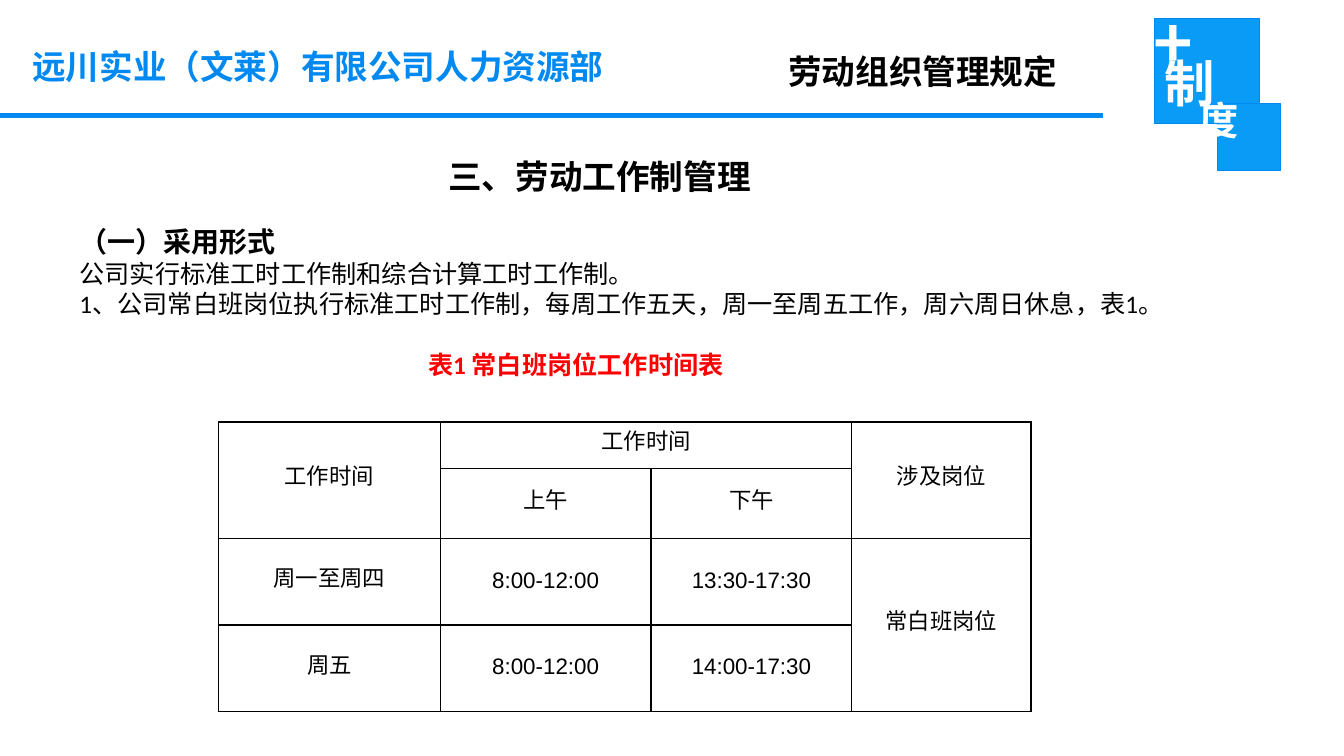
from dataclasses import dataclass

from lxml.etree import SubElement
from pptx import Presentation
from pptx.dml.color import RGBColor
from pptx.enum.shapes import MSO_SHAPE as Preset
from pptx.enum.text import MSO_ANCHOR as Anchor, MSO_AUTO_SIZE as AutoSize, PP_ALIGN as Align
from pptx.oxml.ns import qn
from pptx.util import Pt


@dataclass(frozen=True)
class Theme:
    header_blue: RGBColor = RGBColor(0x00, 0x89, 0xF1)
    square_blue: RGBColor = RGBColor(0x09, 0x9B, 0xF5)
    black: RGBColor = RGBColor(0, 0, 0)
    white: RGBColor = RGBColor(255, 255, 255)
    red: RGBColor = RGBColor(255, 0, 0)
    heading: float = 24
    subheading: float = 20
    body: float = 18
    table: float = 16
    chinese: str = "Noto Sans CJK SC"
    plus_font: str = "Noto Sans CJK JP"
    body_font: str = "Calibri"
    table_font: str = "Arial"


THEME = Theme()


@dataclass(frozen=True)
class Area:
    left: float
    top: float
    width: float
    height: float

    def lengths(self) -> tuple:
        return Pt(self.left), Pt(self.top), Pt(self.width), Pt(self.height)


@dataclass(frozen=True)
class Line:
    text: str
    size: float = THEME.heading
    color: RGBColor = THEME.black
    bold: bool = True
    font: str = THEME.chinese
    east_asian: str = THEME.chinese
    indent: float = 0
    before: float = 0
    spacing: object = 1.0
    align: Align = Align.LEFT


@dataclass(frozen=True)
class Block:
    area: Area
    fill: RGBColor


@dataclass(frozen=True)
class TextBlock:
    area: Area
    lines: tuple


@dataclass(frozen=True)
class Merge:
    first: tuple
    last: tuple


BLOCKS = (
    Block(Area(0, 80.8, 787.5, 3), THEME.header_blue),
    Block(Area(825, 13.5, 74.5, 74.5), THEME.square_blue),
    Block(Area(869.5, 74, 45, 47.5), THEME.square_blue),
)

TITLE = TextBlock(Area(313, 108, 369, 36), (Line("三、劳动工作制管理"),))

TEXTS = (
    TextBlock(Area(817, 33, 112, 74), (
        Line("+", 48, THEME.white, font=THEME.plus_font,
             east_asian=THEME.plus_font, spacing=Pt(22)),
        Line("制", 36, THEME.white, indent=8, spacing=Pt(22)),
        Line("度", 28, THEME.white, indent=33, spacing=Pt(22)),
    )),
    TextBlock(Area(16, 29.5, 645, 36),
              (Line("远川实业（文莱）有限公司人力资源部", color=THEME.header_blue),)),
    TextBlock(Area(556, 32.5, 335, 36), (Line("劳动组织管理规定"),)),
    TextBlock(Area(49.7, 144.7, 816.5, 170), (
        Line("（一）采用形式", THEME.subheading, spacing=1.5),
        Line("公司实行标准工时工作制和综合计算工时工作制。", THEME.body,
             bold=False, font=THEME.body_font),
        Line("1、公司常白班岗位执行标准工时工作制，每周工作五天，周一至周五工作，周六周日休息，表1。",
             THEME.body, bold=False, font=THEME.body_font),
        Line("表1 常白班岗位工作时间表", THEME.body, THEME.red,
             font=THEME.body_font, indent=249, before=22),
    )),
)

TABLE_LEFT, TABLE_TOP = 156, 301.5
COLUMN_WIDTHS = (158.5, 150.5, 143.5, 128)
ROW_HEIGHTS = (33, 50, 62, 62)
SCHEDULE = (
    ("工作时间", "工作时间", "", "涉及岗位"),
    ("", "上午", "下午", ""),
    ("周一至周四", "8:00-12:00", "13:30-17:30", "常白班岗位"),
    ("周五", "8:00-12:00", "14:00-17:30", ""),
)
MERGES = (
    Merge((0, 0), (1, 0)),
    Merge((0, 1), (0, 2)),
    Merge((0, 3), (1, 3)),
    Merge((2, 3), (3, 3)),
)


def write_line(para, line: Line) -> None:
    para.text = line.text
    para.alignment = line.align
    para.line_spacing = line.spacing
    para.space_before = Pt(line.before)
    if line.indent:
        para._p.get_or_add_pPr().set("marL", str(Pt(line.indent)))
    for span in para.runs:
        span.font.size = Pt(line.size)
        span.font.bold = line.bold
        span.font.color.rgb = line.color
        span.font.name = line.font
        east_asian = SubElement(span.font._element, qn("a:ea"))
        east_asian.set("typeface", line.east_asian)


def fill_text(box, block: TextBlock) -> None:
    box.left, box.top, box.width, box.height = block.area.lengths()
    frame = box.text_frame
    frame.word_wrap = True
    frame.auto_size = AutoSize.NONE
    frame.vertical_anchor = Anchor.TOP
    frame.text = "\n".join(line.text for line in block.lines)
    for para, line in zip(frame.paragraphs, block.lines):
        write_line(para, line)


def add_block(page, block: Block) -> None:
    shape = page.shapes.add_shape(Preset.RECTANGLE, *block.area.lengths())
    shape.shadow.inherit = False
    shape.fill.solid()
    shape.fill.fore_color.rgb = block.fill
    shape.line.color.rgb = THEME.header_blue
    shape.line.width = Pt(0.75)


def outline_cell(cell) -> None:
    properties = cell._tc.get_or_add_tcPr()
    for side in ("lnL", "lnR", "lnT", "lnB"):
        edge = SubElement(properties, qn(f"a:{side}"), w=str(Pt(1)))
        fill = SubElement(edge, qn("a:solidFill"))
        SubElement(fill, qn("a:srgbClr"), val=str(THEME.black))


def add_schedule(page) -> None:
    area = Area(TABLE_LEFT, TABLE_TOP, sum(COLUMN_WIDTHS), sum(ROW_HEIGHTS))
    table = page.shapes.add_table(len(ROW_HEIGHTS), len(COLUMN_WIDTHS), *area.lengths()).table
    table.first_row = table.horz_banding = False
    for column, width in zip(table.columns, COLUMN_WIDTHS):
        column.width = Pt(width)
    for row, height, texts in zip(table.rows, ROW_HEIGHTS, SCHEDULE):
        row.height = Pt(height)
        for cell, text in zip(row.cells, texts):
            cell.margin_left = cell.margin_right = Pt(5)
            cell.margin_top = cell.margin_bottom = Pt(0)
            cell.vertical_anchor = Anchor.MIDDLE
            outline_cell(cell)
            cell.fill.background()
            write_line(cell.text_frame.paragraphs[0],
                       Line(text, THEME.table, bold=False, font=THEME.table_font,
                            spacing=Pt(16), align=Align.CENTER))
    for merge in MERGES:
        table.cell(*merge.first).merge(table.cell(*merge.last))


def main() -> None:
    deck = Presentation()
    deck.slide_width, deck.slide_height = Pt(960), Pt(540)
    page = deck.slides.add_slide(deck.slide_layouts[5])
    fill_text(page.shapes.title, TITLE)
    for block in BLOCKS:
        add_block(page, block)
    for text_block in TEXTS:
        fill_text(page.shapes.add_textbox(*text_block.area.lengths()), text_block)
    add_schedule(page)
    deck.save("out.pptx")


if __name__ == "__main__":
    main()
